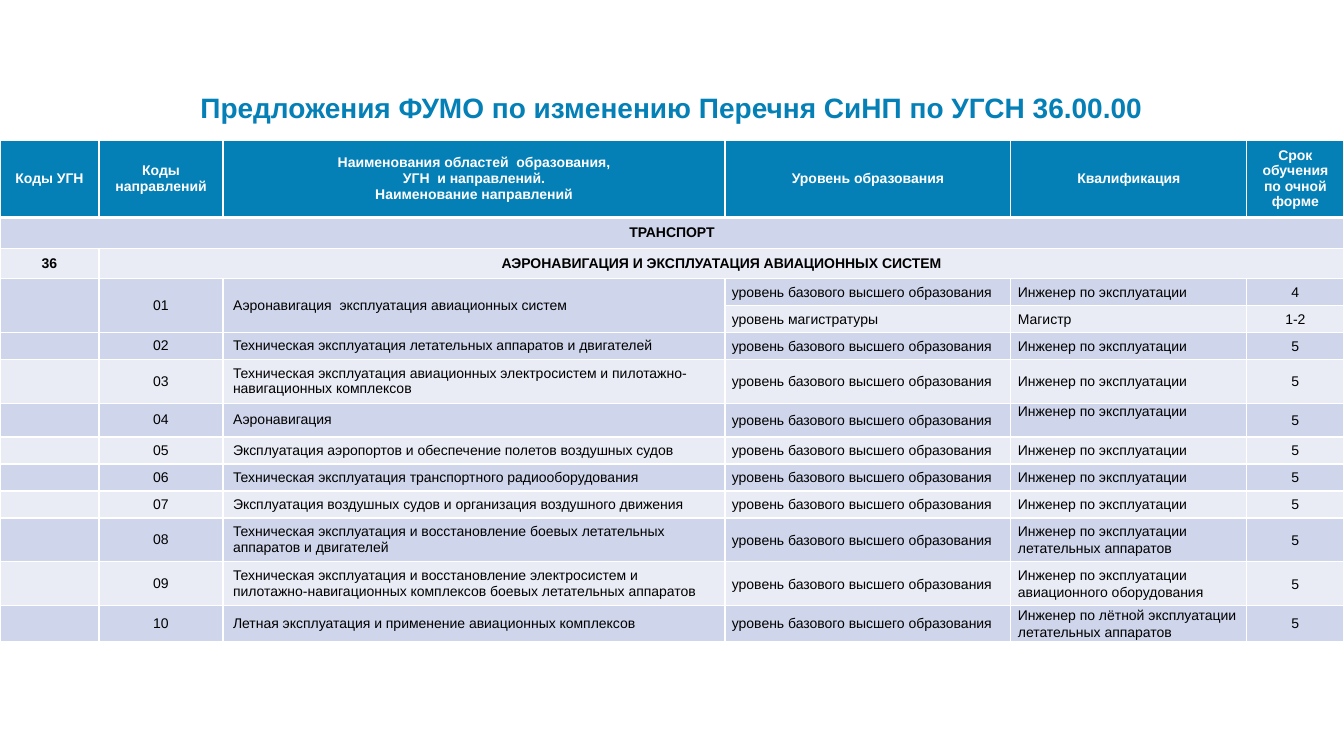
from dataclasses import dataclass

import lxml.etree
import pptx
import pptx.dml.color
import pptx.enum.text
import pptx.oxml.ns
import pptx.util

RGB = pptx.dml.color.RGBColor
BLUE = RGB(0x04, 0x80, 0xB7)
WHITE = RGB(0xFF, 0xFF, 0xFF)
BLACK = RGB(0, 0, 0)
DARK = RGB(0xCF, 0xD5, 0xEA)
PALE = RGB(0xE9, 0xEB, 0xF5)

ALIGN = pptx.enum.text.PP_ALIGN
ANCHOR = pptx.enum.text.MSO_ANCHOR
WIDE, HIGH = 1344, 756
SCALE = 12192000 / WIDE
SIZE = 10

TITLE = "Предложения ФУМО по изменению Перечня СиНП по УГСН 36.00.00"
HEADS = (
    "Коды УГН",
    "Коды направлений",
    "Наименования областей  образования,\nУГН  и направлений.\nНаименование направлений",
    "Уровень образования",
    "Квалификация",
    "Срок обучения по очной форме",
)
BASE = "уровень базового высшего образования"
POST = "Инженер по эксплуатации"
COLS = (99, 124, 502, 286, 236, 97)
TOP = 140
# Header, field and group rows; course rows carry their own heights
HEAD_ROWS = (77, 31, 30)


@dataclass
class Course:
    code: str
    name: str
    high: int = 27
    post: str = POST
    term: str = "5"
    level: str = BASE


COURSES = (
    Course("01", "Аэронавигация  эксплуатация авиационных систем", term="4"),
    Course("", "", post="Магистр", term="1-2", level="уровень магистратуры"),
    Course("02", "Техническая эксплуатация летательных аппаратов и двигателей"),
    Course("03", "Техническая эксплуатация авиационных электросистем и "
           "пилотажно-навигационных комплексов", 41),
    Course("04", "Аэронавигация", 34),
    Course("05", "Эксплуатация аэропортов и обеспечение полетов воздушных судов"),
    Course("06", "Техническая эксплуатация транспортного радиооборудования"),
    Course("07", "Эксплуатация воздушных судов и организация воздушного движения"),
    Course("08", "Техническая эксплуатация и восстановление боевых летательных "
           "аппаратов и двигателей", 41, POST + " летательных аппаратов"),
    Course("09", "Техническая эксплуатация и восстановление электросистем и "
           "пилотажно-навигационных комплексов боевых летательных аппаратов",
           41, POST + " авиационного оборудования"),
    Course("10", "Летная эксплуатация и применение авиационных комплексов", 34,
           "Инженер по лётной эксплуатации летательных аппаратов"),
)


def px(num: int) -> int:
    return round(num * SCALE)


def apply(item: object, form: dict) -> None:
    for key, val in form.items():
        setattr(item, key, val)


def style(font, size: int, color: RGB, bold: bool) -> None:
    apply(font, {"name": "Arial", "size": pptx.util.Pt(size), "bold": bold})
    font.color.rgb = color


def edge(cell, foot: int) -> None:
    """Draw white borders, with the bottom one foot points wide."""
    qn = pptx.oxml.ns.qn
    props = cell._tc.get_or_add_tcPr()
    for pos, side in enumerate("LRTB"):
        width = pptx.util.Pt(foot if side == "B" else 1)
        line = lxml.etree.Element(qn("a:ln" + side), w=str(int(width)))
        fill = lxml.etree.SubElement(line, qn("a:solidFill"))
        lxml.etree.SubElement(fill, qn("a:srgbClr"), val=str(WHITE))
        props.insert(pos, line)


def paint(cell, text: str, row: int, col: int) -> None:
    head, body = row == 0, row >= len(HEAD_ROWS)
    tight = body and col >= 3
    cell.vertical_anchor = ANCHOR.MIDDLE
    if tight:
        apply(cell, {"margin_left": px(7), "margin_right": px(7),
                     "margin_top": 0, "margin_bottom": 0})
    cell.fill.solid()
    cell.fill.fore_color.rgb = BLUE if head else (DARK if row % 2 else PALE)
    edge(cell, 3 if head else 1)
    cell.text = text
    for para in cell.text_frame.paragraphs:
        left = body and col in (2, 3, 4)
        para.alignment = ALIGN.LEFT if left else ALIGN.CENTER
        if tight:
            para.line_spacing = 1.07
        for run in para.runs:
            style(run.font, SIZE, WHITE if head else BLACK, not body)
        # Keeps empty cells as low as filled ones
        lxml.etree.SubElement(para._p, pptx.oxml.ns.qn("a:endParaRPr"),
                              sz=str(SIZE * 100))


def add_grid(slide) -> None:
    rows = [HEADS, ("ТРАНСПОРТ",) + ("",) * 5,
            ("36", "АЭРОНАВИГАЦИЯ И ЭКСПЛУАТАЦИЯ АВИАЦИОННЫХ СИСТЕМ") + ("",) * 4]
    rows += [("", c.code, c.name, c.level, c.post, c.term) for c in COURSES]
    highs = HEAD_ROWS + tuple(c.high for c in COURSES)
    grid = slide.shapes.add_table(len(rows), len(COLS), 0, px(TOP),
                                  px(WIDE), px(sum(highs))).table
    grid.horz_banding = False
    for col, wide in zip(grid.columns, COLS):
        col.width = px(wide)
    for row, high in zip(grid.rows, highs):
        row.height = px(high)
    for i, row in enumerate(rows):
        for j, text in enumerate(row):
            paint(grid.cell(i, j), text, i, j)

    # Course 04 has its post at the top of the cell
    spot = len(HEAD_ROWS) + [c.code for c in COURSES].index("04")
    grid.cell(spot, 4).vertical_anchor = ANCHOR.TOP

    # Field, group and two-level course spans
    grid.cell(1, 0).merge(grid.cell(1, 5))
    grid.cell(2, 1).merge(grid.cell(2, 5))
    for col in range(3):
        grid.cell(3, col).merge(grid.cell(4, col))


def add_title(slide) -> None:
    title = slide.shapes.title
    apply(title, {"left": px(65), "top": px(85),
                  "width": px(1213), "height": px(43)})
    frame = title.text_frame
    frame.text = TITLE
    apply(frame, {"word_wrap": True, "vertical_anchor": ANCHOR.TOP,
                  "auto_size": pptx.enum.text.MSO_AUTO_SIZE.SHAPE_TO_FIT_TEXT})
    para = frame.paragraphs[0]
    para.alignment = ALIGN.CENTER
    style(para.runs[0].font, 20, BLUE, True)


def main() -> None:
    deck = pptx.Presentation()
    apply(deck, {"slide_width": px(WIDE), "slide_height": px(HIGH)})
    slide = deck.slides.add_slide(deck.slide_layouts[5])
    add_title(slide)
    add_grid(slide)
    deck.save("out.pptx")


if __name__ == "__main__":
    main()
